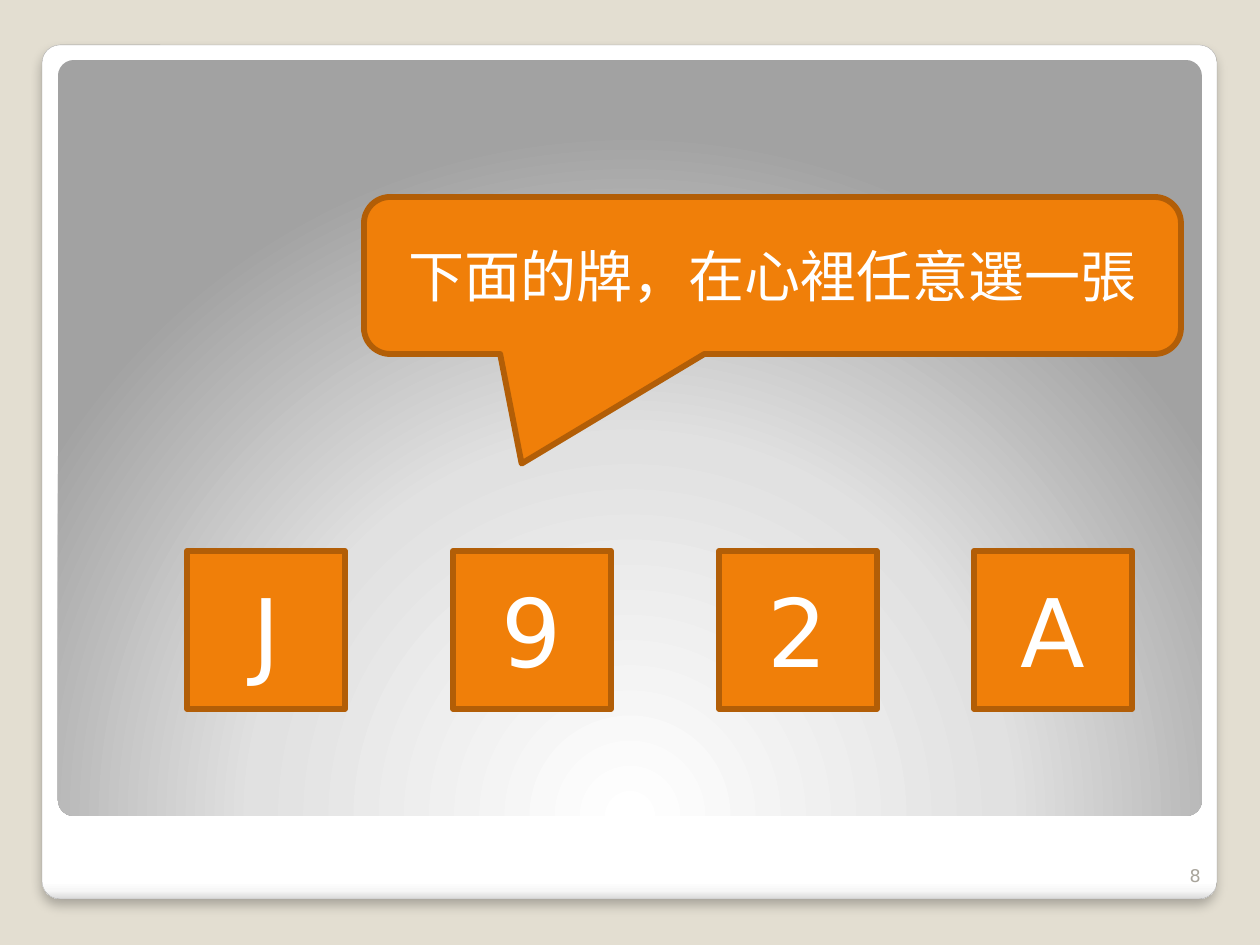
import pptx
import pptx.dml.color
import pptx.enum.shapes
import pptx.enum.text
import pptx.oxml
import pptx.oxml.ns
import pptx.util
from dataclasses import dataclass

PX = 914400 / 126  # EMU in one px
KIND = pptx.enum.shapes.MSO_SHAPE
ALIGN = pptx.enum.text.PP_ALIGN
ANCHOR = pptx.enum.text.MSO_ANCHOR
RGB = pptx.dml.color.RGBColor.from_string


@dataclass
class Theme:
    back: str = "E3DED1"
    edge: str = "A4A4A4"
    fill: str = "F07F09"
    line: str = "B25E07"
    text: str = "FFFFFF"
    note: str = "A8A49B"
    font: str = "DejaVu Sans"
    call: int = 32
    card: int = 54
    page: int = 10


theme = Theme()


def write(shape, text, size, color=theme.text, align=ALIGN.CENTER, anchor=ANCHOR.MIDDLE):
    frame = shape.text_frame
    frame.word_wrap = True
    frame.vertical_anchor = anchor
    para = frame.paragraphs[0]
    para.alignment = align
    run = para.add_run()
    run.text = text
    run.font.name = theme.font
    run.font.size = pptx.util.Pt(size)
    run.font.color.rgb = RGB(color)


def draw(kind, box, adjust=(), grad=None, course=""):
    shape = slide.shapes.add_shape(kind, *[round(n * PX) for n in box])
    shape.shadow.inherit = False
    for i, value in enumerate(adjust):
        shape.adjustments[i] = value
    if grad is None:
        shape.fill.solid()
        shape.fill.fore_color.rgb = RGB(theme.fill)
        shape.line.color.rgb = RGB(theme.line)
        shape.line.width = pptx.util.Pt(3.35)
        return shape
    stops = "".join(
        f'<a:gs pos="{pos * 1000}"><a:srgbClr val="{color}"/></a:gs>' for pos, color in grad
    )
    shape.fill.gradient()
    old = shape.element.spPr.find(pptx.oxml.ns.qn("a:gradFill"))
    new = pptx.oxml.parse_xml(
        f'<a:gradFill {pptx.oxml.ns.nsdecls("a")} rotWithShape="1">'
        f"<a:gsLst>{stops}</a:gsLst>{course}</a:gradFill>"
    )
    old.getparent().replace(old, new)
    return shape


deck = pptx.Presentation()
deck.slide_width = round(1260 * PX)
deck.slide_height = round(945 * PX)
slide = deck.slides.add_slide(deck.slide_layouts[6])
slide.background.fill.solid()
slide.background.fill.fore_color.rgb = RGB(theme.back)

# White frame with a soft shadow
frame = draw(
    KIND.ROUNDED_RECTANGLE, (42, 45, 1175, 854), [0.021],
    [(0, "FFFFFF"), (98, "FFFFFF"), (99, "F7F7F7"), (100, "DADADA")],
    '<a:lin ang="5400000" scaled="0"/>',
)
frame.line.color.rgb = RGB(theme.edge)
frame.line.width = pptx.util.Pt(0.16)
frame.element.spPr.find(pptx.oxml.ns.qn("a:effectLst")).append(pptx.oxml.parse_xml(
    f'<a:outerShdw {pptx.oxml.ns.nsdecls("a")} blurRad="76200" dist="50800" dir="5400000" '
    'algn="tl" rotWithShape="0"><a:srgbClr val="000000"><a:alpha val="25000"/></a:srgbClr>'
    "</a:outerShdw>"
))

# Grey stage, lit from below
stage = draw(
    KIND.ROUNDED_RECTANGLE, (58, 60, 1144, 756), [0.021],
    [(0, "FFFFFF"), (55, "E1E1E1"), (100, "A2A2A2")],
    '<a:path path="circle"><a:fillToRect l="50000" t="175000" r="50000" b="-75000"/></a:path>',
)
stage.line.fill.background()

# Page number
page = slide.shapes.add_textbox(*[round(n * PX) for n in (1150, 842, 63, 50)])
write(page, "8", theme.page, color=theme.note, align=ALIGN.RIGHT, anchor=ANCHOR.BOTTOM)

# Speech bubble
call = draw(KIND.ROUNDED_RECTANGULAR_CALLOUT, (364, 197, 817, 157), [-0.307, 1.198, 0.167])
write(call, "下面的牌，在心裡任意選一張", theme.call)

# Row of cards
for left, face in zip((187, 453, 719, 974), "J92A"):
    write(draw(KIND.RECTANGLE, (left, 551, 158, 158)), face, theme.card)

deck.save("out.pptx")
